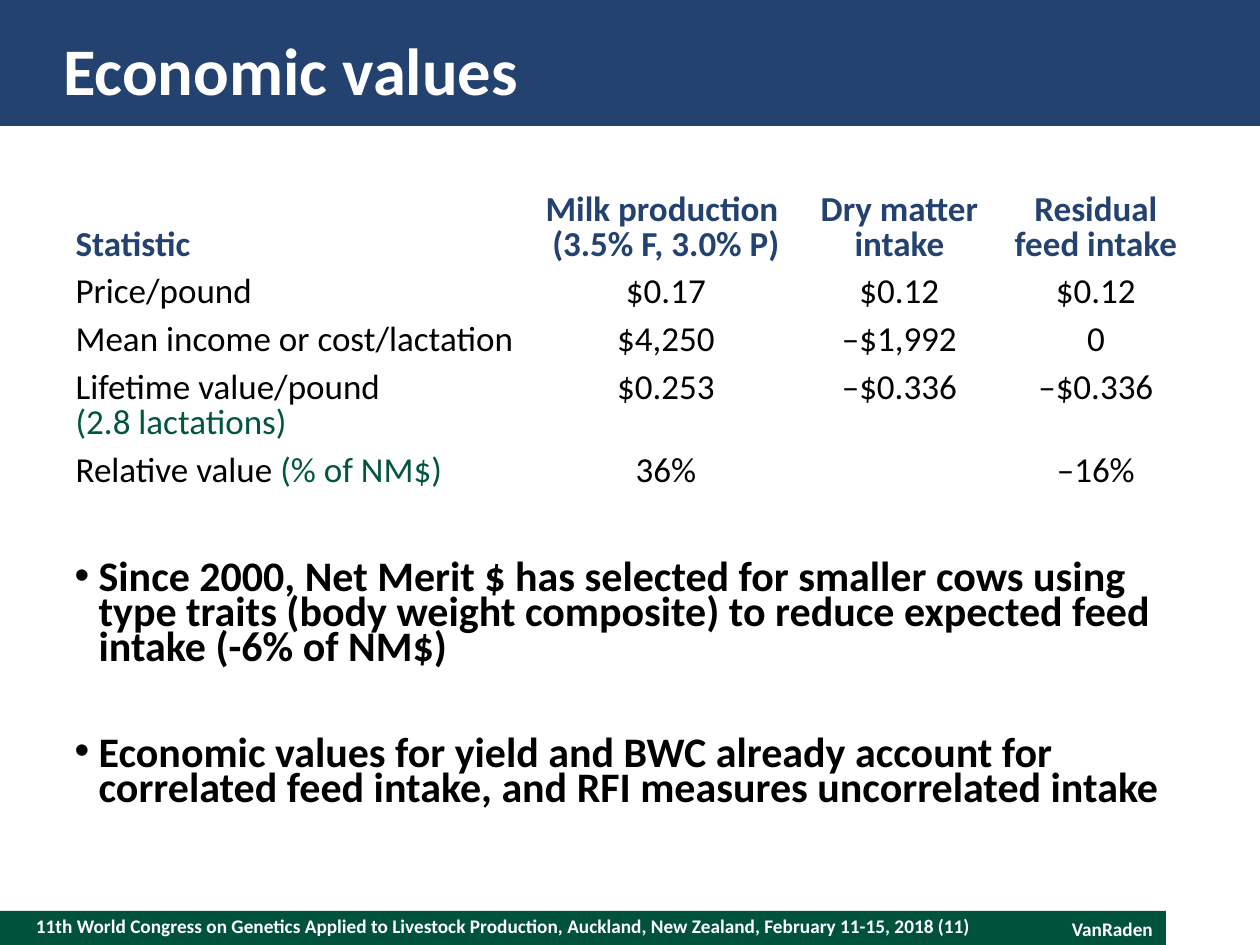
"""Build the slide on economic values of milk yield and feed intake."""
from pptx import Presentation
from pptx.dml.color import RGBColor
from pptx.enum.shapes import MSO_SHAPE as Shape
from pptx.enum.text import MSO_ANCHOR as Anchor, MSO_AUTO_SIZE as Fit, PP_ALIGN as Align
from pptx.util import Pt

PX = 914400 // 126
NAVY, GREEN, INK, WHITE = "244270", "00523C", "000000", "FFFFFF"
NOTE = "00563F"


def rgb(code):
    return RGBColor.from_string(code)


def style(run, size, color, bold=True):
    font = run.font
    font.name, font.size, font.bold = "Calibri", Pt(size), bold
    font.color.rgb = rgb(color)


deck = Presentation()
deck.slide_width, deck.slide_height = 1260 * PX, 945 * PX
slide = deck.slides.add_slide(deck.slide_layouts[1])
shapes = slide.shapes
title, body = slide.placeholders

bands = [(0, 911, 1166, 34, GREEN), (0, 0, 1260, 126, NAVY)]
for x, y, w, h, color in bands:
    band = shapes.add_shape(Shape.RECTANGLE, x * PX, y * PX, w * PX, h * PX)
    band.shadow.inherit = False
    band.fill.solid()
    band.fill.fore_color.rgb = rgb(color)
    band.line.fill.background()
    shapes._spTree.insert(2, band._element)

event = ("11th World Congress on Genetics Applied to Livestock Production, "
         "Auckland, New Zealand, February 11-15, 2018 (11)")
feet = [(36, 907, 970, 38, event, Align.LEFT, 0),
        (914, 911, 252, 36, "VanRaden", Align.RIGHT, 13)]
for x, y, w, h, text, align, pad in feet:
    frame = shapes.add_textbox(x * PX, y * PX, w * PX, h * PX).text_frame
    frame.word_wrap = True
    frame.vertical_anchor = Anchor.MIDDLE
    frame.margin_left = frame.margin_right = pad * PX
    frame.margin_top = frame.margin_bottom = 0
    frame.text = text
    para = frame.paragraphs[0]
    para.alignment = align
    style(para.runs[0], 11, WHITE)

title.left, title.top, title.width, title.height = 63 * PX, 25 * PX, 1134 * PX, 88 * PX
frame = title.text_frame
frame.text = "Economic values"
frame.auto_size = Fit.NONE
frame.vertical_anchor = Anchor.MIDDLE
frame.margin_left = frame.margin_right = frame.margin_top = frame.margin_bottom = 0
frame.paragraphs[0].alignment = Align.LEFT
style(frame.paragraphs[0].runs[0], 38, WHITE)

rows = [
    ["Statistic", "Milk production \n(3.5% F, 3.0% P)", "Dry matter intake", "Residual feed intake"],
    ["Price/pound", "$0.17", "$0.12", "$0.12"],
    ["Mean income or cost/lactation", "$4,250", "–$1,992", "0"],
    ["Lifetime value/pound\n(2.8 lactations)", "$0.253", "–$0.336", "–$0.336"],
    ["Relative value (% of NM$)", "36%", "", "–16%"],
    ["", "", "", ""],
]
widths = [465, 276, 191, 202]
heights = [83, 48, 48, 83, 48, 45]
table = shapes.add_table(6, 4, 63 * PX, 189 * PX, sum(widths) * PX, sum(heights) * PX).table
table.first_row = table.horz_banding = False
for col, width in zip(table.columns, widths):
    col.width = width * PX
for r, (row, height) in enumerate(zip(rows, heights)):
    table.rows[r].height = height * PX
    for c, text in enumerate(row):
        cell = table.cell(r, c)
        cell.fill.background()
        cell.vertical_anchor = Anchor.TOP if r else Anchor.BOTTOM
        cell.text = text
        for para in cell.text_frame.paragraphs:
            para.alignment = Align.CENTER if c else Align.LEFT
            para.line_spacing = Pt(20)
            para.font.size = Pt(20)
            main, mark, rest = para.text.partition("(")
            para.clear()
            for part, color in [(main, INK), (mark + rest, NOTE)]:
                if part:
                    run = para.add_run()
                    run.text = part
                    style(run, 20, color if r else NAVY, not r)

points = [
    "Since 2000, Net Merit $ has selected for smaller cows using type traits "
    "(body weight composite) to reduce expected feed intake (-6% of NM$)",
    "Economic values for yield and BWC already account for correlated feed intake, "
    "and RFI measures uncorrelated intake",
]
body.left, body.top, body.width, body.height = 62 * PX, 559 * PX, 1111 * PX, 295 * PX
frame = body.text_frame
frame.text = "\n".join(points)
frame.auto_size = Fit.NONE
for i, para in enumerate(frame.paragraphs):
    props = para._p.get_or_add_pPr()
    props.set("marL", str(24 * PX))
    props.set("indent", str(-24 * PX))
    para.line_spacing = Pt(20)
    para.space_before = Pt(40 * i)
    style(para.runs[0], 24, INK)

deck.save("out.pptx")
